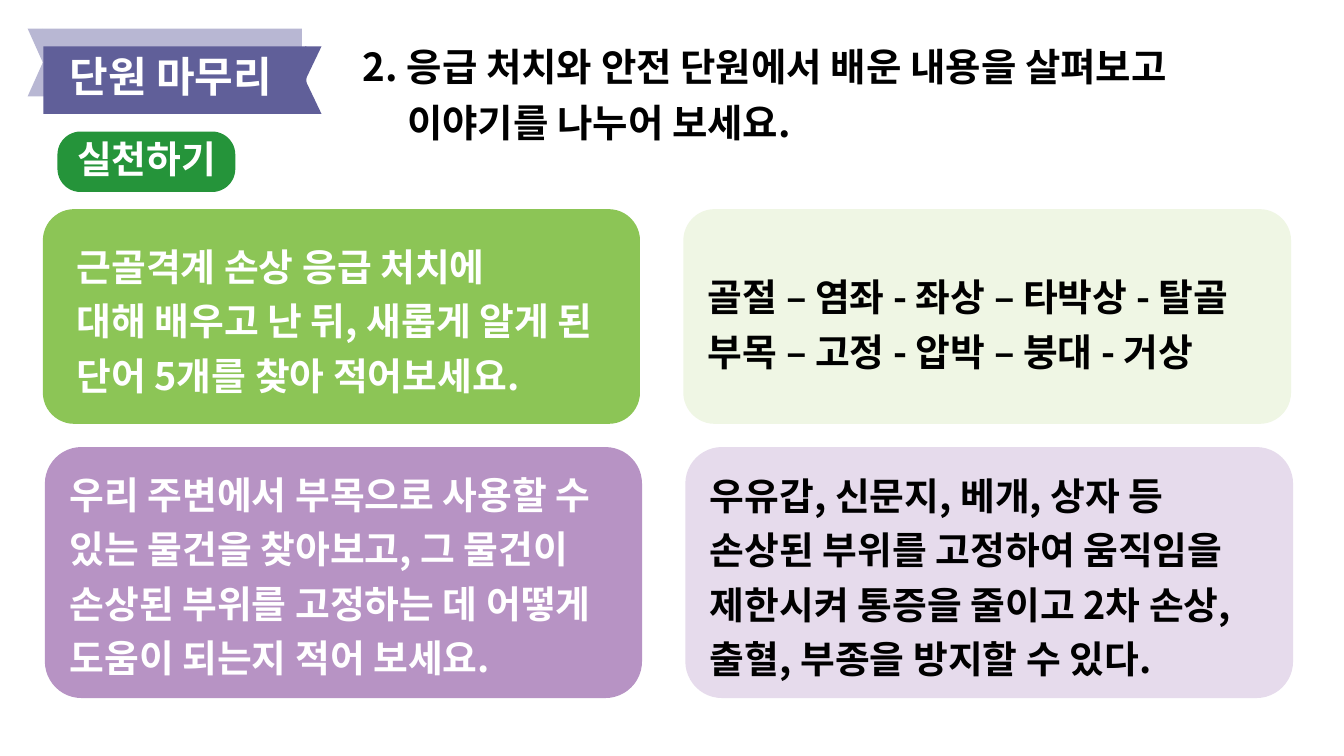
from dataclasses import dataclass

from lxml.etree import SubElement
from pptx import Presentation
from pptx.dml.color import RGBColor
from pptx.enum.shapes import MSO_SHAPE
from pptx.enum.text import MSO_ANCHOR, MSO_AUTO_SIZE, PP_ALIGN
from pptx.oxml.ns import qn
from pptx.shapes.autoshape import Shape
from pptx.slide import Slide
from pptx.text.text import TextFrame
from pptx.util import Inches, Pt

FONT = "Noto Sans CJK KR"
WHITE, BLACK = "FFFFFF", "000000"

Box = tuple[float, float, float, float]


@dataclass
class Card:
    box: Box
    fill: str
    text_box: Box
    color: str
    lines: list[str]


@dataclass
class RibbonPart:
    kind: MSO_SHAPE
    box: Box
    fill: str
    rotation: float = 0


CARDS = [
    Card((0.85, 4.15, 11.85, 4.26), "8CC556", (1.42, 4.6, 10.56, 2.86), WHITE,
         ["근골격계 손상 응급 처치에",
          "대해 배우고 난 뒤, 새롭게 알게 된 단어 5개를 찾아 적어보세요."]),
    Card((13.56, 4.15, 12.06, 4.26), "EFF6E4", (13.95, 5.21, 10.81, 1.95), BLACK,
         ["골절 – 염좌 - 좌상 – 타박상 - 탈골",
          "부목 – 고정 - 압박 – 붕대 - 거상"]),
    Card((0.89, 8.87, 11.85, 4.98), "B793C4", (1.28, 9.13, 11.08, 4.46), WHITE,
         ["우리 주변에서 부목으로 사용할 수 있는 물건을 찾아보고, 그 물건이 "
          "손상된 부위를 고정하는 데 어떻게 도움이 되는지 적어 보세요."]),
    Card((13.6, 8.87, 12.06, 4.98), "E6DBEC", (13.99, 9.15, 11.47, 4.46), BLACK,
         ["우유갑, 신문지, 베개, 상자 등",
          "손상된 부위를 고정하여 움직임을 제한시켜 통증을 줄이고 2차 손상, "
          "출혈, 부종을 방지할 수 있다."]),
]

RIBBON = [
    RibbonPart(MSO_SHAPE.PENTAGON, (0.85, 0.57, 5.14, 1.34), "B8B7D3", 180),
    RibbonPart(MSO_SHAPE.CHEVRON, (0.55, 0.57, 0.6, 1.34), "B8B7D3"),
    RibbonPart(MSO_SHAPE.PENTAGON, (0.86, 0.92, 5.22, 1.34), "605F99"),
    RibbonPart(MSO_SHAPE.CHEVRON, (5.74, 0.92, 0.64, 1.34), "605F99", 180),
]


def rgb(color: str) -> RGBColor:
    return RGBColor.from_string(color)


def add_block(s: Slide, kind: MSO_SHAPE, box: Box, fill: str,
              adj: float | None = None, rotation: float = 0) -> Shape:
    """Add a filled preset shape with no outline or shadow."""
    sp = s.shapes.add_shape(kind, *map(Inches, box))
    sp.shadow.inherit = False
    sp.fill.solid()
    sp.fill.fore_color.rgb = rgb(fill)
    sp.line.fill.background()
    sp.rotation = rotation
    if adj is not None:
        sp.adjustments[0] = adj
    return sp


def write(tf: TextFrame, lines: list[str], *, size: float = 54,
          color: str = BLACK, spacing: float = 1.2,
          align: PP_ALIGN = PP_ALIGN.LEFT) -> None:
    for i, line in enumerate(lines):
        p = tf.paragraphs[0] if i == 0 else tf.add_paragraph()
        p.alignment, p.line_spacing = align, spacing
        p.space_before = Pt(0)
        r = p.add_run()
        r.text = line
        f = r.font
        f.name, f.size, f.bold = FONT, Pt(size), True
        f.color.rgb = rgb(color)
        SubElement(f._element, qn("a:ea"), typeface=FONT)


def add_text(s: Slide, box: Box, lines: list[str], **fmt) -> TextFrame:
    tf = s.shapes.add_textbox(*map(Inches, box)).text_frame
    tf.word_wrap = True
    tf.auto_size = MSO_AUTO_SIZE.SHAPE_TO_FIT_TEXT
    write(tf, lines, **fmt)
    return tf


def add_title(s: Slide) -> None:
    title = s.shapes.title
    title.left, title.top, title.width, title.height = map(
        Inches, (7.1, 0.63, 17.14, 2.23))
    tf = title.text_frame
    tf.word_wrap = True
    tf.auto_size = MSO_AUTO_SIZE.NONE
    tf.vertical_anchor = MSO_ANCHOR.TOP
    write(tf, ["2. 응급 처치와 안전 단원에서 배운 내용을 살펴보고",
               "이야기를 나누어 보세요."], size=55)
    tf.paragraphs[1]._p.get_or_add_pPr().set("marL", str(Inches(0.88)))


def add_badge(s: Slide) -> None:
    add_block(s, MSO_SHAPE.ROUNDED_RECTANGLE, (1.14, 2.61, 3.53, 1.2),
              "25943A", adj=0.383)
    tf = add_text(s, (1.43, 2.74, 2.96, 0.93), ["실천하기"], color=WHITE,
                  spacing=0.9, align=PP_ALIGN.CENTER)
    tf.word_wrap = False
    tf.vertical_anchor = MSO_ANCHOR.MIDDLE
    tf.margin_left = tf.margin_right = Inches(0.06)
    tf.margin_top = tf.margin_bottom = Inches(0.06)


def add_ribbon(s: Slide) -> None:
    for part in RIBBON:
        adj = 0 if part.kind == MSO_SHAPE.PENTAGON else None
        add_block(s, part.kind, part.box, part.fill, adj, part.rotation)
    add_text(s, (1.28, 1.07, 4.41, 1.01), ["단원 마무리"], size=60,
             color=WHITE, spacing=0.9)


def add_card(s: Slide, card: Card) -> None:
    add_block(s, MSO_SHAPE.ROUNDED_RECTANGLE, card.box, card.fill, adj=0.146)
    add_text(s, card.text_box, card.lines, color=card.color)


def main() -> None:
    prs = Presentation()
    prs.slide_width, prs.slide_height = Inches(26.67), Inches(15)
    s = prs.slides.add_slide(prs.slide_layouts[5])
    add_badge(s)
    add_ribbon(s)
    add_title(s)
    for card in CARDS:
        add_card(s, card)
    prs.save("out.pptx")


if __name__ == "__main__":
    main()
